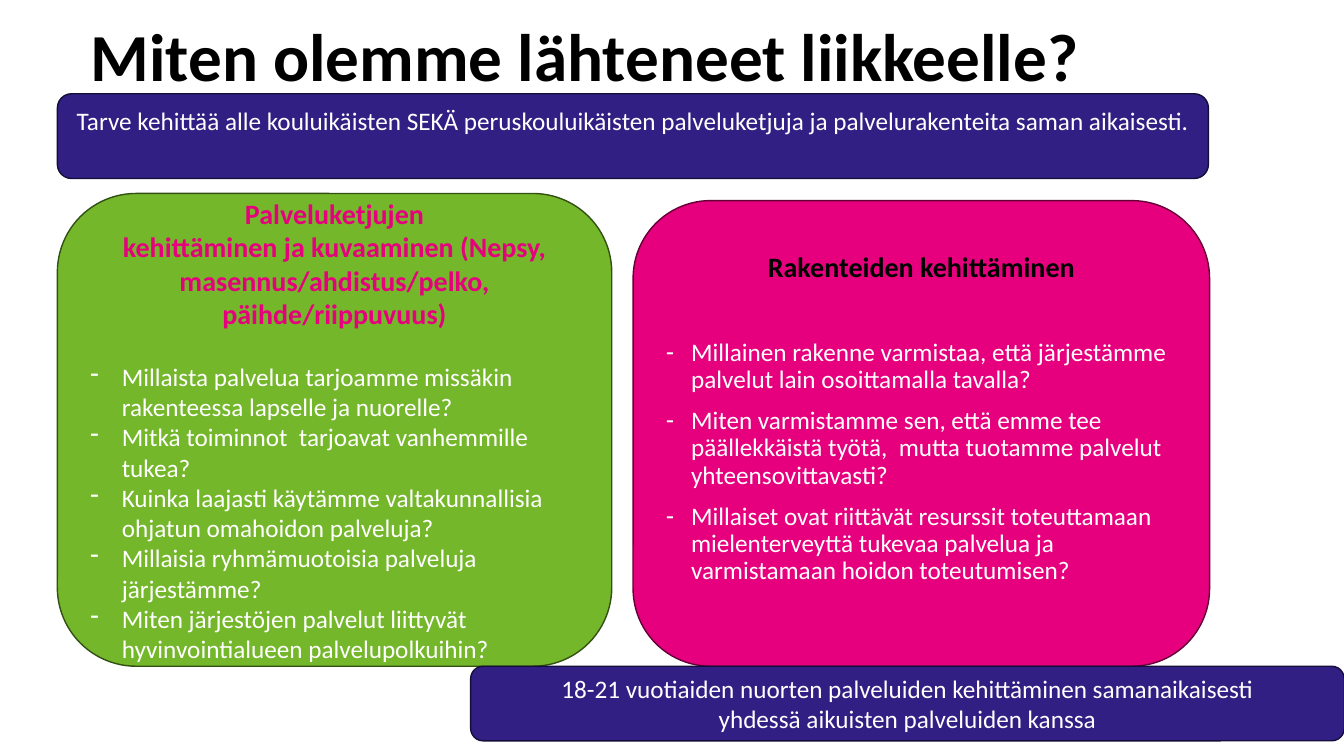
"""Build the slide on how the service development work was started."""
import pptx
import pptx.util
import pptx.dml.color
import pptx.enum.shapes
import pptx.enum.text
import pptx.oxml
import pptx.oxml.ns

Pt = pptx.util.Pt
ALIGN = pptx.enum.text.PP_ALIGN
NS = pptx.oxml.ns.nsdecls("a")

WHITE, BLACK, PINK, GREEN, BLUE = "FFFFFF", "000000", "E6007E", "74B72B", "311F83"
BLUE_LINE, GREEN_LINE, PINK_LINE = "150E39", "335013", "650037"

TITLE = "Miten olemme lähteneet liikkeelle?"
NEED = ["Tarve kehittää alle kouluikäisten SEKÄ peruskouluikäisten palveluketjuja "
        "ja palvelurakenteita saman aikaisesti."]
YOUNG_ADULTS = ["18-21 vuotiaiden nuorten palveluiden kehittäminen samanaikaisesti",
                "yhdessä aikuisten palveluiden kanssa"]
CHAINS_HEAD = ["Palveluketjujen",
               "kehittäminen ja kuvaaminen (Nepsy, masennus/ahdistus/pelko, päihde/riippuvuus)"]
CHAINS = ["Millaista palvelua tarjoamme missäkin rakenteessa lapselle ja nuorelle?",
          "Mitkä toiminnot  tarjoavat vanhemmille tukea?",
          "Kuinka laajasti käytämme valtakunnallisia ohjatun omahoidon palveluja?",
          "Millaisia ryhmämuotoisia palveluja järjestämme?",
          "Miten järjestöjen palvelut liittyvät hyvinvointialueen palvelupolkuihin?"]
STRUCTURES_HEAD = ["Rakenteiden kehittäminen"]
STRUCTURES = ["Millainen rakenne varmistaa, että järjestämme palvelut lain osoittamalla tavalla?",
              "Miten varmistamme sen, että emme tee päällekkäistä työtä,  mutta tuotamme "
              "palvelut yhteensovittavasti?",
              "Millaiset ovat riittävät resurssit toteuttamaan mielenterveyttä tukevaa "
              "palvelua ja varmistamaan hoidon toteutumisen?"]

TITLE_BOX = (57.6, 18.7, 774.7, 48.2)
NEED_BOX = (41, 67, 822.2, 60.5)
CHAINS_BOX = (41, 138.2, 396, 337.7)
STRUCTURES_BOX = (452.2, 143.3, 411.8, 332.6)
YOUNG_BOX = (336.2, 475.9, 624, 53.3)


def rgb(color):
    return pptx.dml.color.RGBColor.from_string(color)


def place(sp, box):
    sp.left, sp.top, sp.width, sp.height = (Pt(v) for v in box)


def paint(sp, fill, line):
    sp.fill.solid()
    sp.fill.fore_color.rgb = rgb(fill)
    sp.line.color.rgb = rgb(line)
    sp.line.width = Pt(1)


def frame(sp, bottom=3.6):
    tf = sp.text_frame
    tf.word_wrap = True
    tf.auto_size = pptx.enum.text.MSO_AUTO_SIZE.NONE
    tf.vertical_anchor = pptx.enum.text.MSO_ANCHOR.MIDDLE
    tf.margin_left = tf.margin_right = Pt(7.2)
    tf.margin_top, tf.margin_bottom = Pt(3.6), Pt(bottom)
    return tf


def write(tf, lines, size, color, bold=False, align=ALIGN.CENTER,
          indent=0, spacing=1.0, gap=0, lead=0):
    for i, text in enumerate(lines):
        first = not tf.paragraphs[0].runs
        p = tf.paragraphs[0] if first else tf.add_paragraph()
        pPr = p._p.get_or_add_pPr()
        pPr.set("marL", str(Pt(indent)))
        pPr.set("indent", str(-Pt(indent)))
        bullet = '<a:buChar %s char="-"/>' if indent else "<a:buNone %s/>"
        pPr.append(pptx.oxml.parse_xml(bullet % NS))
        p.alignment = align
        p.line_spacing = spacing
        p.space_before = Pt(0 if first else lead if i == 0 else gap)
        p.space_after = Pt(0)
        r = p.add_run()
        r.text = text
        r.font.name = "Calibri"
        r.font.size = Pt(size)
        r.font.bold = bold
        r.font.color.rgb = rgb(color)


def add_panel(s, box, fill, line, bottom=3.6):
    sp = s.shapes.add_shape(pptx.enum.shapes.MSO_SHAPE.ROUNDED_RECTANGLE,
                            *(Pt(v) for v in box))
    sp.shadow.inherit = False
    paint(sp, fill, line)
    return frame(sp, bottom)


def main():
    prs = pptx.Presentation()
    prs.slide_width, prs.slide_height = Pt(960), Pt(540)
    s = prs.slides.add_slide(prs.slide_layouts[1])

    title, body = s.shapes.title, s.placeholders[1]
    place(title, TITLE_BOX)
    write(frame(title), [TITLE], 48, BLACK, True, ALIGN.LEFT, spacing=0.9)

    place(body, STRUCTURES_BOX)
    body._element.spPr.append(pptx.oxml.parse_xml(
        '<a:prstGeom %s prst="roundRect"><a:avLst/></a:prstGeom>' % NS))
    paint(body, PINK, PINK_LINE)
    tf = frame(body, bottom=24)
    write(tf, STRUCTURES_HEAD, 20, BLACK, True, spacing=0.9)
    write(tf, STRUCTURES, 18, WHITE, align=ALIGN.LEFT, indent=18,
          spacing=0.9, gap=10, lead=40)

    tf = add_panel(s, CHAINS_BOX, GREEN, GREEN_LINE)
    write(tf, CHAINS_HEAD, 20, PINK, True)
    write(tf, CHAINS, 18, WHITE, align=ALIGN.LEFT, indent=22.5, lead=22)

    write(add_panel(s, NEED_BOX, BLUE, BLUE_LINE, bottom=25.6), NEED, 18, WHITE)
    write(add_panel(s, YOUNG_BOX, BLUE, BLUE_LINE), YOUNG_ADULTS, 18, WHITE)

    prs.save("out.pptx")


if __name__ == "__main__":
    main()
